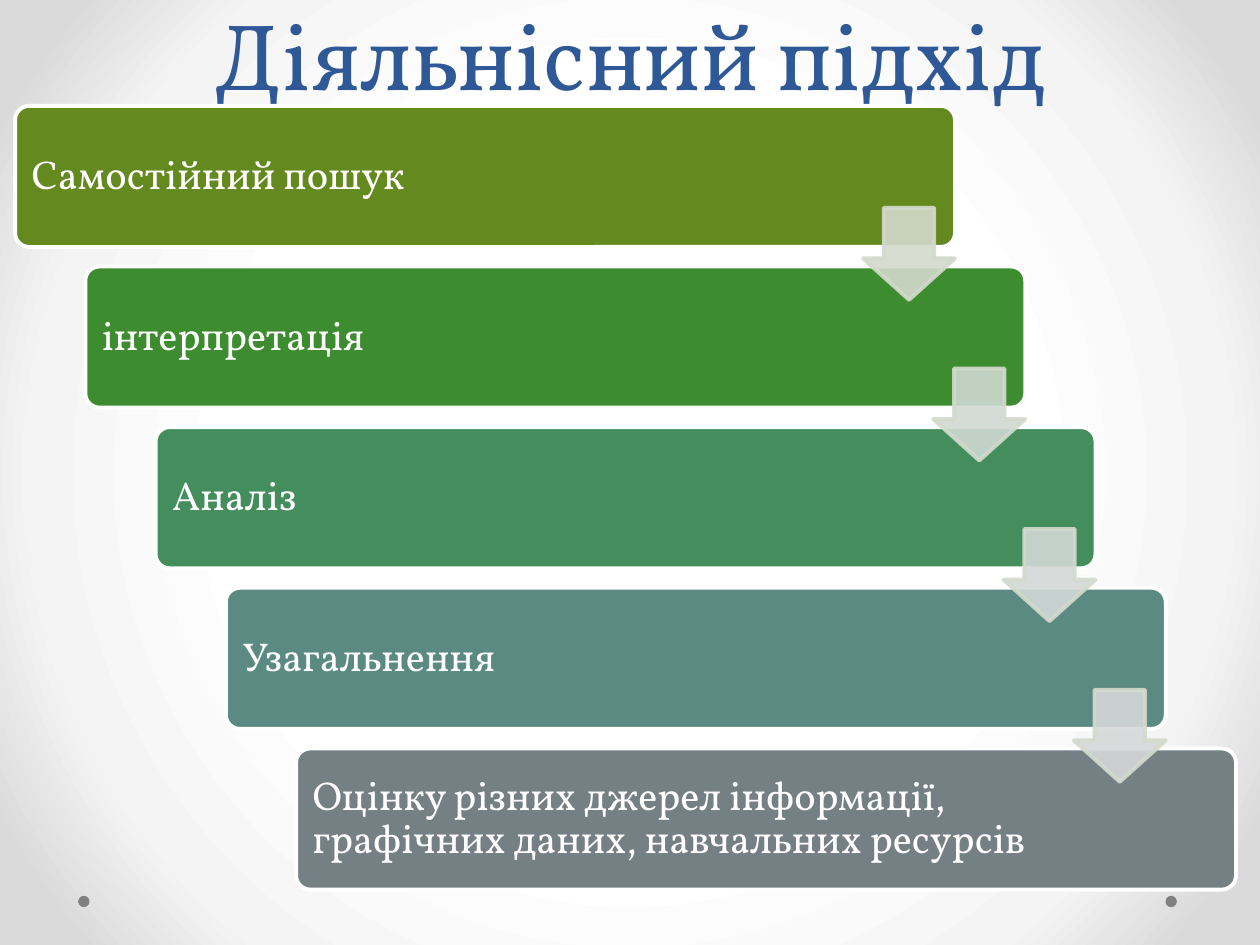
"""Build a slide showing the steps of the activity approach as a descending staircase."""
from pptx import Presentation
from pptx.dml.color import RGBColor
from pptx.enum.shapes import MSO_SHAPE
from pptx.enum.text import MSO_ANCHOR, PP_ALIGN
from pptx.oxml import parse_xml
from pptx.oxml.ns import nsdecls
from pptx.util import Inches, Pt

ROUNDED, ARROW, DOT = MSO_SHAPE.ROUNDED_RECTANGLE, MSO_SHAPE.DOWN_ARROW, MSO_SHAPE.OVAL
MIDDLE, BOTTOM = MSO_ANCHOR.MIDDLE, MSO_ANCHOR.BOTTOM
LEFT, CENTER = PP_ALIGN.LEFT, PP_ALIGN.CENTER


def write_text(shape, text, *, size, color, align, anchor, spacing, insets):
    frame = shape.text_frame
    frame.word_wrap = True
    frame.vertical_anchor = anchor
    frame.margin_left, frame.margin_top, frame.margin_right, frame.margin_bottom = map(Inches, insets)
    paragraph = frame.paragraphs[0]
    paragraph.alignment = align
    paragraph.line_spacing = spacing
    run = paragraph.add_run()
    run.text = text
    run.font.name = "Vollkorn"
    run.font.size = Pt(size)
    run.font.color.rgb = RGBColor.from_string(color)


def add_block(slide, kind, box, fill, line=None, adjustments=(), opacity=100):
    shape = slide.shapes.add_shape(kind, *map(Inches, box))
    shape.shadow.inherit = False
    for index, value in enumerate(adjustments):
        shape.adjustments[index] = value
    shape.fill.solid()
    shape.fill.fore_color.rgb = RGBColor.from_string(fill)
    if line:
        shape.line.color.rgb = RGBColor.from_string(line)
        shape.line.width = Pt(2.25)
    else:
        shape.line.fill.background()
    if opacity < 100:
        for color in shape._element.spPr.xpath(".//a:srgbClr"):
            color.append(parse_xml(f'<a:alpha {nsdecls("a")} val="{opacity * 1000}"/>'))
    return shape


presentation = Presentation()
presentation.slide_width = Inches(10)
presentation.slide_height = Inches(7.5)
slide = presentation.slides.add_slide(presentation.slide_layouts[5])

stops = "".join(
    f'<a:gs pos="{position * 1000}"><a:srgbClr val="{color}"/></a:gs>'
    for position, color in [(50, "FFFFFF"), (76, "F4F4F4"), (92, "DADADA")]
)
slide.element.cSld.insert(0, parse_xml(
    f'<p:bg {nsdecls("p", "a")}><p:bgPr><a:gradFill rotWithShape="1"><a:gsLst>{stops}</a:gsLst>'
    '<a:path path="circle"><a:fillToRect l="50000" t="50000" r="50000" b="50000"/></a:path>'
    '</a:gradFill><a:effectLst/></p:bgPr></p:bg>'
))

for dot_left in (0.62, 9.25):
    add_block(slide, DOT, (dot_left, 7.11, 0.09, 0.09), "808080")

title = slide.shapes.title
title.left, title.top, title.width, title.height = map(Inches, (0.5, 0, 9, 0.92))
write_text(title, "Діяльнісний підхід", size=54, color="2F5897", align=CENTER,
           anchor=BOTTOM, spacing=Pt(58), insets=(0.1, 0.05, 0.1, 0.05))

steps = [
    ("Самостійний пошук", "63891F"),
    ("інтерпретація", "3E8C30"),
    ("Аналіз", "448D5D"),
    ("Узагальнення", "5B8A82"),
    ("Оцінку різних джерел інформації, графічних даних, навчальних ресурсів", "758085"),
]
step_right = (2.35 - 0.12) / 4
step_down = (5.94 - 0.84) / 4

for index, (text, fill) in enumerate(steps):
    box = (0.12 + index * step_right, 0.84 + index * step_down, 7.46, 1.12)
    bar = add_block(slide, ROUNDED, box, fill, "FFFFFF", [0.1])
    write_text(bar, text, size=23, color="FFFFFF", align=LEFT,
               anchor=MIDDLE, spacing=0.9, insets=(0.1, 0.1, 1.39, 0.1))

for index, fill in enumerate(["D3DACD", "D0D9D1", "D3D9D8", "D6D8D9"]):
    box = (6.85 + index * step_right, 1.65 + index * step_down, 0.73, 0.73)
    add_block(slide, ARROW, box, fill, "D3DACD", [0.55, 0.45], opacity=90)

presentation.save("out.pptx")
